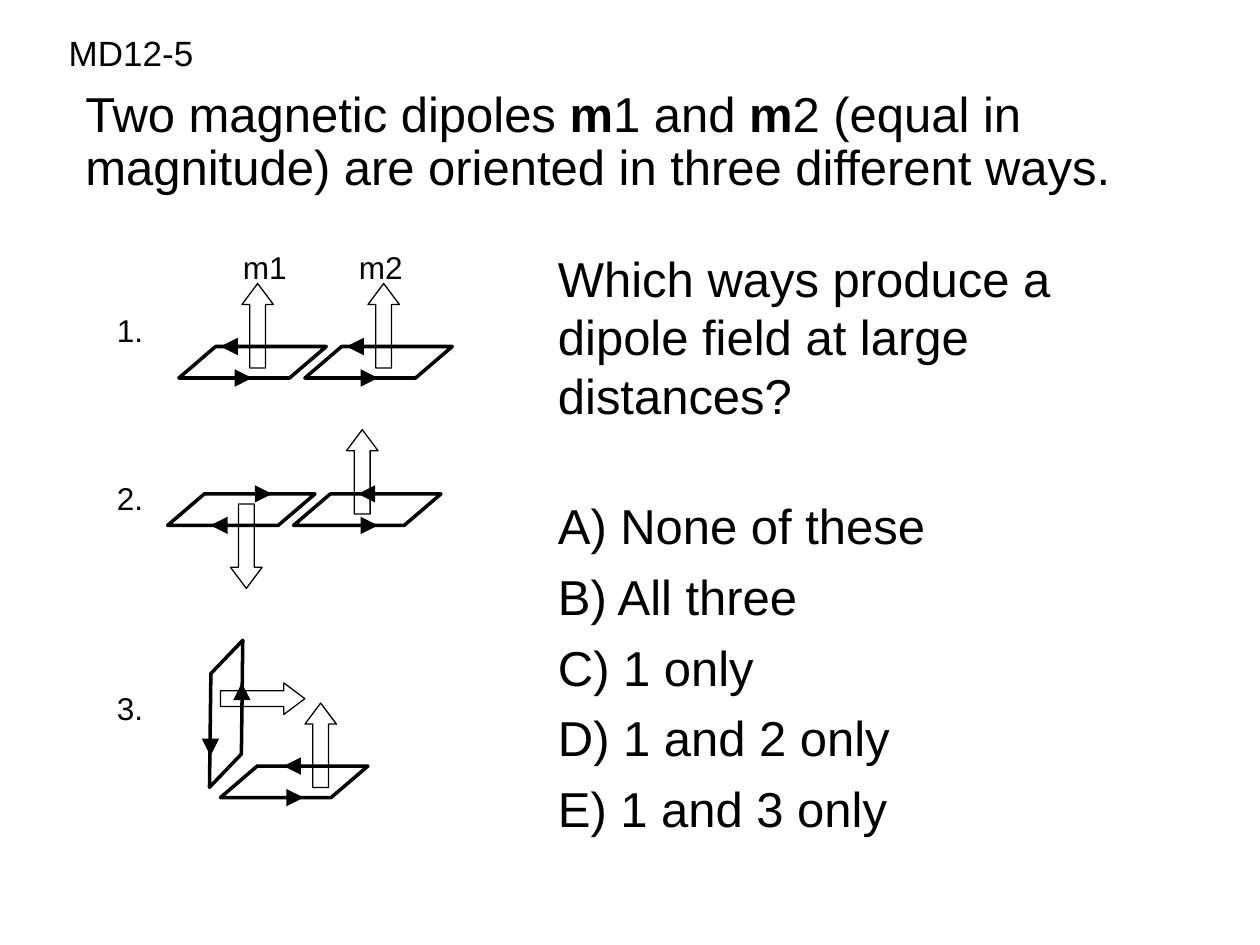
from lxml import etree
from pptx import Presentation
from pptx.dml.color import RGBColor
from pptx.enum import shapes, text
from pptx.oxml.ns import qn
from pptx.util import Inches, Pt

BLACK = RGBColor(0, 0, 0)
FONT = "Arial"

INTRO = [("Two magnetic dipoles ", False), ("m", True), ("1 and ", False), ("m", True),
         ("2 (equal in magnitude) are oriented in three different ways.", False)]
QUESTION = "Which ways produce a dipole field at large distances?"
ANSWERS = ["None of these", "All three", "1 only", "1 and 2 only", "1 and 3 only"]

# text, left, top, width, height
LABELS = [("m1", 1.83, 1.92, 0.56, 0.4), ("m2", 2.75, 1.92, 0.67, 0.4),
          ("1.", 0.83, 2.42, 0.48, 0.5), ("2.", 0.83, 3.75, 0.48, 0.5),
          ("3.", 0.83, 5.42, 0.48, 0.5)]

LOOP_SIZE = (1.17, 0.25)
FLAT_LOOPS = [(1.42, 2.75), (2.42, 2.75), (2.33, 3.92), (1.33, 3.92), (1.75, 6.08)]
UPRIGHT_LOOP = (1.21, 5.54)

# Current arrows: start point and direction
CURRENT_LENGTH = 0.33
STEP = {"right": (1, 0), "left": (-1, 0), "up": (0, -1), "down": (0, 1)}
CURRENTS = [(2.67, 3, "right"), (1.67, 3, "right"), (2.67, 4.17, "right"),
            (1.83, 3.92, "right"), (2.08, 6.33, "right"), (3.08, 2.75, "left"),
            (2, 4.17, "left"), (3.17, 3.92, "left"), (2.08, 2.75, "left"),
            (1.92, 5.75, "up"), (2.58, 6.08, "left"), (1.67, 5.67, "down")]

# Dipole moments: left and top before rotation, and direction
MOMENT_SIZE = (0.67, 0.25)
ROTATION = {"right": 0, "down": 90, "up": 270}
MOMENTS = [(1.71, 2.46, "up"), (2.71, 2.46, "up"), (2.54, 3.62, "up"),
           (2.21, 5.79, "up"), (1.75, 5.42, "right"), (1.62, 4.21, "down")]


def add_outline(slide, kind, pos, size, weight, adjust, rotation=0):
    sp = slide.shapes.add_shape(kind, *map(Inches, pos + size))
    sp.shadow.inherit = False
    sp.fill.background()
    sp.line.color.rgb = BLACK
    sp.line.width = Pt(weight)
    for i, value in enumerate(adjust):
        sp.adjustments[i] = value
    sp.rotation = rotation
    return sp


def add_current(slide, x, y, direction):
    dx, dy = STEP[direction]
    ends = (x, y, x + dx * CURRENT_LENGTH, y + dy * CURRENT_LENGTH)
    line = slide.shapes.add_connector(shapes.MSO_CONNECTOR.STRAIGHT, *map(Inches, ends))
    line.line.color.rgb = BLACK
    line.line.width = Pt(0.75)
    etree.SubElement(line.line._get_or_add_ln(), qn("a:tailEnd"),
                     type="triangle", w="lg", len="lg")
    etree.SubElement(line._element.spPr, qn("a:effectLst"))


def add_textbox(slide, box, wrap=True):
    tf = slide.shapes.add_textbox(*map(Inches, box)).text_frame
    tf.word_wrap = wrap
    return tf


def style(p, size):
    p.font.name = FONT
    p.font.size = Pt(size)
    p.font.color.rgb = BLACK


def add_question(slide):
    tf = add_textbox(slide, (4.33, 1.92, 4.87, 4.81))
    tf.text = QUESTION
    style(tf.paragraphs[0], 28)
    for i, answer in enumerate(ANSWERS):
        p = tf.add_paragraph()
        p.text = " " + answer
        style(p, 28)
        p.line_spacing = 1.2
        p.space_before = Pt(0 if i else 34)
        pPr = p._p.get_or_add_pPr()
        bullet = etree.Element(qn("a:buAutoNum"), type="alphaUcParenR")
        pPr.find(qn("a:defRPr")).addprevious(bullet)


def main():
    prs = Presentation()
    prs.slide_width, prs.slide_height = Inches(10), Inches(7.5)
    slide = prs.slides.add_slide(prs.slide_layouts[6])

    p = add_textbox(slide, (0.58, 0.67, 9, 1)).paragraphs[0]
    style(p, 28)
    p.line_spacing = 0.9
    for words, bold in INTRO:
        r = p.add_run()
        r.text = words
        r.font.bold = bold

    loop = shapes.MSO_SHAPE.PARALLELOGRAM
    for pos in FLAT_LOOPS:
        add_outline(slide, loop, pos, LOOP_SIZE, 2, [1.167])
    upright = add_outline(slide, loop, UPRIGHT_LOOP, LOOP_SIZE, 2, [1.069], 90.7)
    upright._element.spPr.find(qn("a:xfrm")).set("flipH", "1")

    for current in CURRENTS:
        add_current(slide, *current)
    for x, y, direction in MOMENTS:
        add_outline(slide, shapes.MSO_SHAPE.RIGHT_ARROW, (x, y), MOMENT_SIZE, 0.75,
                    [0.5, 0.667], ROTATION[direction])

    for label, *box in LABELS:
        tf = add_textbox(slide, box, wrap=False)
        tf.text = label
        style(tf.paragraphs[0], 18)

    add_question(slide)

    tf = add_textbox(slide, (0.33, 0.25, 1.42, 0.33))
    tf.margin_left = tf.margin_right = tf.margin_top = tf.margin_bottom = 0
    tf.text = "MD12-5"
    style(tf.paragraphs[0], 20)
    tf.paragraphs[0].alignment = text.PP_ALIGN.CENTER

    prs.save("out.pptx")


if __name__ == "__main__":
    main()
